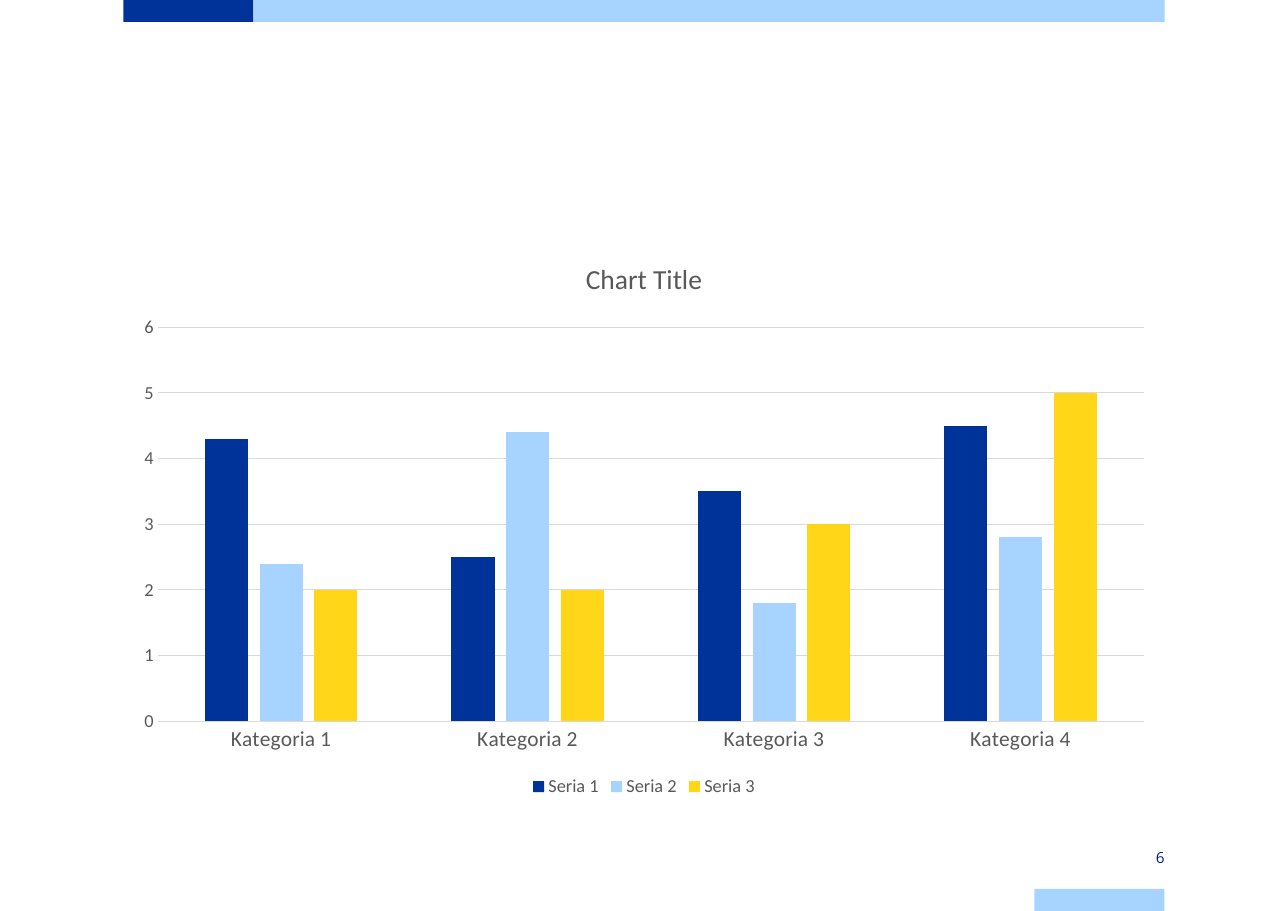
"""Build a slide with a clustered column chart between coloured page bands."""
import pptx
import pptx.chart.data
import pptx.dml.color
import pptx.enum.chart
import pptx.enum.shapes
import pptx.enum.text
import pptx.util

WIDTH, HEIGHT = 11.69, 8.27
MARGIN = 1.12
COLUMN = (WIDTH - 2 * MARGIN) / 8
ROW = 0.2

NAVY, SKY, YELLOW = "003399", "A6D3FF", "FFD618"
GREY, RULE, NUMBER_BLUE = "595959", "D9D9D9", "002073"

BANDS = [(0, 1, 0, NAVY), (1, 7, 0, SKY), (7, 1, HEIGHT - ROW, SKY)]
TITLE = "Chart Title"
CATEGORIES = ["Kategoria 1", "Kategoria 2", "Kategoria 3", "Kategoria 4"]
SERIES = [
    ("Seria 1", NAVY, (4.3, 2.5, 3.5, 4.5)),
    ("Seria 2", SKY, (2.4, 4.4, 1.8, 2.8)),
    ("Seria 3", YELLOW, (2, 2, 3, 5)),
]
PAGE_NUMBER = "6"
CHART_TOP, CHART_HEIGHT = 2.16, 5.12
NUMBER_TOP = 7.68


def colour(value):
    return pptx.dml.color.RGBColor.from_string(value)


def apply(target, values):
    for name, value in values.items():
        setattr(target, name, value)


def style_font(font, size, hue, name="Calibri"):
    apply(font, {"size": pptx.util.Pt(size), "name": name, "bold": False})
    font.color.rgb = colour(hue)


def style_line(line):
    line.color.rgb = colour(RULE)
    line.width = pptx.util.Pt(0.75)


def grid_box(column, span, top, height):
    lengths = (MARGIN + column * COLUMN, top, span * COLUMN, height)
    return [pptx.util.Inches(length) for length in lengths]


def add_bands(slide):
    for column, span, top, hue in BANDS:
        band = slide.shapes.add_shape(
            pptx.enum.shapes.MSO_SHAPE.RECTANGLE, *grid_box(column, span, top, ROW))
        band.shadow.inherit = False
        band.fill.solid()
        band.fill.fore_color.rgb = colour(hue)
        band.line.fill.background()


def add_columns(slide):
    figures = pptx.chart.data.CategoryChartData()
    figures.categories = CATEGORIES
    for name, _, values in SERIES:
        figures.add_series(name, values)
    chart = slide.shapes.add_chart(
        pptx.enum.chart.XL_CHART_TYPE.COLUMN_CLUSTERED,
        *grid_box(0, 8, CHART_TOP, CHART_HEIGHT), figures).chart
    style_font(chart.font, 10, "000000")

    chart.has_title = True
    heading = chart.chart_title.text_frame
    heading.text = TITLE
    style_font(heading.paragraphs[0].runs[0].font, 18, GREY)

    plot = chart.plots[0]
    apply(plot, {"gap_width": 219, "overlap": -27, "vary_by_categories": False})
    for series, (_, hue, _) in zip(plot.series, SERIES):
        series.format.fill.solid()
        series.format.fill.fore_color.rgb = colour(hue)
        series.invert_if_negative = False

    no_tick = pptx.enum.chart.XL_TICK_MARK.NONE
    for axis, size in ((chart.category_axis, 14), (chart.value_axis, 12)):
        apply(axis, {"major_tick_mark": no_tick, "minor_tick_mark": no_tick})
        style_font(axis.tick_labels.font, size, GREY)
    style_line(chart.category_axis.format.line)
    apply(chart.value_axis, {"minimum_scale": 0, "maximum_scale": 6, "major_unit": 1})
    chart.value_axis.format.line.fill.background()
    style_line(chart.value_axis.major_gridlines.format.line)

    chart.has_legend = True
    apply(chart.legend, {
        "position": pptx.enum.chart.XL_LEGEND_POSITION.BOTTOM,
        "include_in_layout": False,
    })
    style_font(chart.legend.font, 12, GREY)


def add_page_number(slide):
    frame = slide.shapes.add_textbox(*grid_box(7, 1, NUMBER_TOP, ROW)).text_frame
    inset = pptx.util.Inches(0.08)
    apply(frame, {
        "text": PAGE_NUMBER,
        "word_wrap": True,
        "vertical_anchor": pptx.enum.text.MSO_ANCHOR.MIDDLE,
        "margin_left": 0,
        "margin_right": 0,
        "margin_top": inset,
        "margin_bottom": inset,
    })
    number = frame.paragraphs[0]
    number.alignment = pptx.enum.text.PP_ALIGN.RIGHT
    style_font(number.runs[0].font, 10, NUMBER_BLUE, "Open Sans")


def main():
    deck = pptx.Presentation()
    apply(deck, {
        "slide_width": pptx.util.Inches(WIDTH),
        "slide_height": pptx.util.Inches(HEIGHT),
    })
    slide = deck.slides.add_slide(deck.slide_layouts[6])
    add_bands(slide)
    add_columns(slide)
    add_page_number(slide)
    deck.save("out.pptx")


if __name__ == "__main__":
    main()
